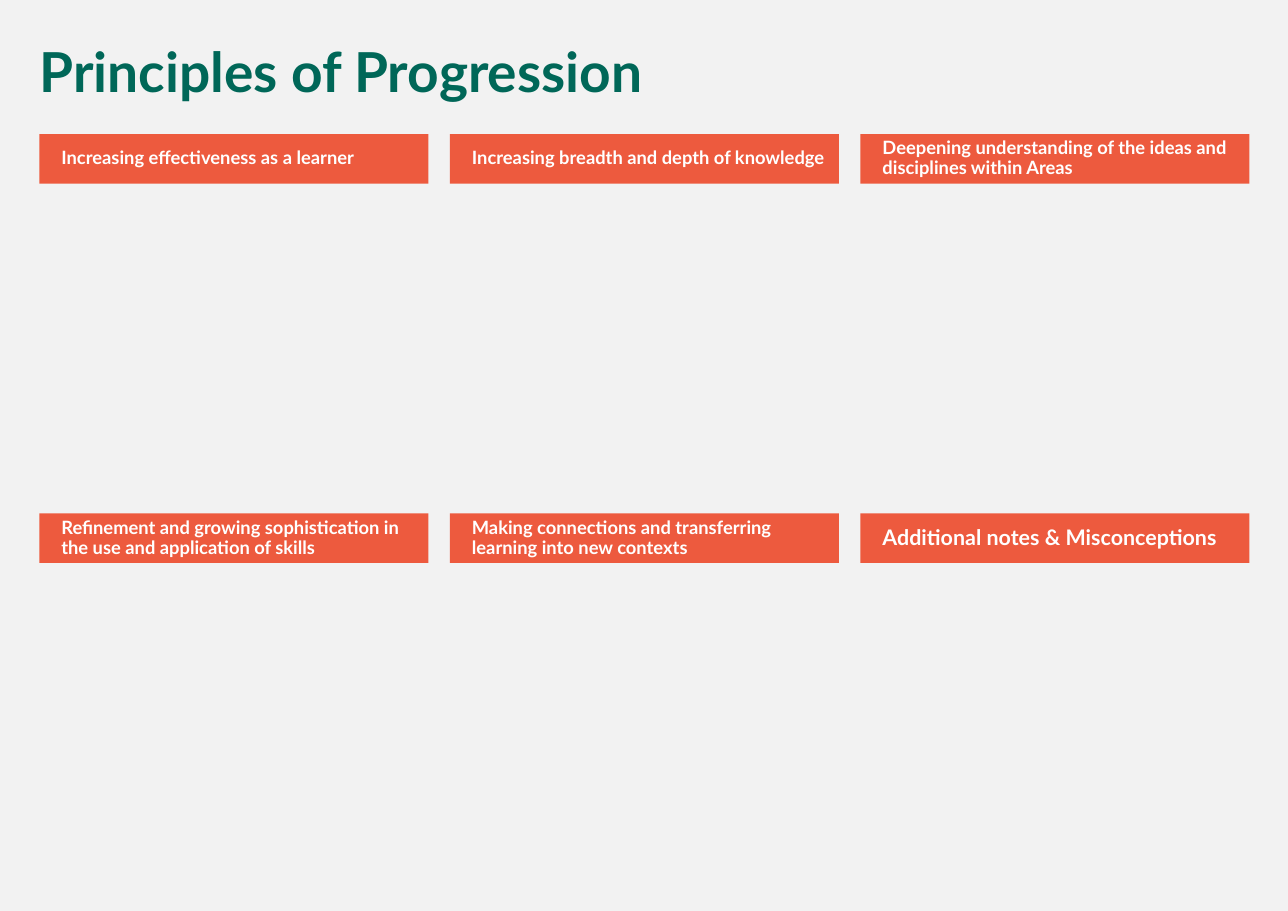
"""Build the Principles of Progression planning sheet."""
from dataclasses import dataclass

from pptx import Presentation
from pptx import util as u
from pptx.dml import color
from pptx.enum import shapes, text
from pptx.slide import Slide
from pptx.text.text import TextFrame

COLOURS = {"background": "F2F2F2", "bar": "ED5A3E", "title": "006758", "heading": "FFFFFF"}
FONT = "Lato"
LEFT, COLUMN_PITCH = 25.7, 268.3
TOP, ROW_PITCH = 87.6, 248
BAR_WIDTH, BAR_HEIGHT = 254.2, 32.4
COLUMNS = 3


@dataclass(frozen=True)
class Principle:
    heading: str
    size: float = 12


PRINCIPLES = [
    Principle("Increasing effectiveness as a learner"),
    Principle("Increasing breadth and depth of knowledge"),
    Principle("Deepening understanding of the ideas and disciplines within Areas"),
    Principle("Refinement and growing sophistication in the use and application of skills"),
    Principle("Making connections and transferring learning into new contexts"),
    Principle("Additional notes & Misconceptions", 14),
]


def rgb(name: str) -> color.RGBColor:
    return color.RGBColor.from_string(COLOURS[name])


def write(frame: TextFrame, words: str, size: float, colour: str) -> None:
    frame.word_wrap = True
    frame.text = words
    paragraph = frame.paragraphs[0]
    paragraph.alignment = text.PP_ALIGN.LEFT
    paragraph.line_spacing = 0.9
    paragraph.space_before = u.Pt(11)
    font = paragraph.runs[0].font
    font.name, font.size, font.bold = FONT, u.Pt(size), True
    font.color.rgb = rgb(colour)


def draw_title(slide: Slide, words: str) -> None:
    title = slide.shapes.add_textbox(u.Pt(18.7), u.Pt(25.9), u.Pt(797.8), u.Pt(46.8))
    write(title.text_frame, words, 36, "title")


def draw_principle(slide: Slide, principle: Principle, row: int, column: int) -> None:
    bar = slide.shapes.add_shape(
        shapes.MSO_SHAPE.RECTANGLE,
        u.Pt(LEFT + column * COLUMN_PITCH), u.Pt(TOP + row * ROW_PITCH),
        u.Pt(BAR_WIDTH), u.Pt(BAR_HEIGHT),
    )
    bar.shadow.inherit = False
    bar.fill.solid()
    bar.fill.fore_color.rgb = rgb("bar")
    bar.line.fill.background()
    frame = bar.text_frame
    frame.margin_left, frame.margin_right = u.Pt(14.4), u.Pt(7.2)
    frame.margin_top = frame.margin_bottom = u.Pt(3.6)
    frame.vertical_anchor = text.MSO_ANCHOR.MIDDLE
    write(frame, principle.heading, principle.size, "heading")


def main() -> None:
    deck = Presentation()
    deck.slide_width, deck.slide_height = u.Pt(841.68), u.Pt(595.44)
    sheet = deck.slides.add_slide(deck.slide_layouts[6])
    sheet.background.fill.solid()
    sheet.background.fill.fore_color.rgb = rgb("background")
    draw_title(sheet, "Principles of Progression")
    for index, principle in enumerate(PRINCIPLES):
        draw_principle(sheet, principle, *divmod(index, COLUMNS))
    deck.save("out.pptx")


if __name__ == "__main__":
    main()
